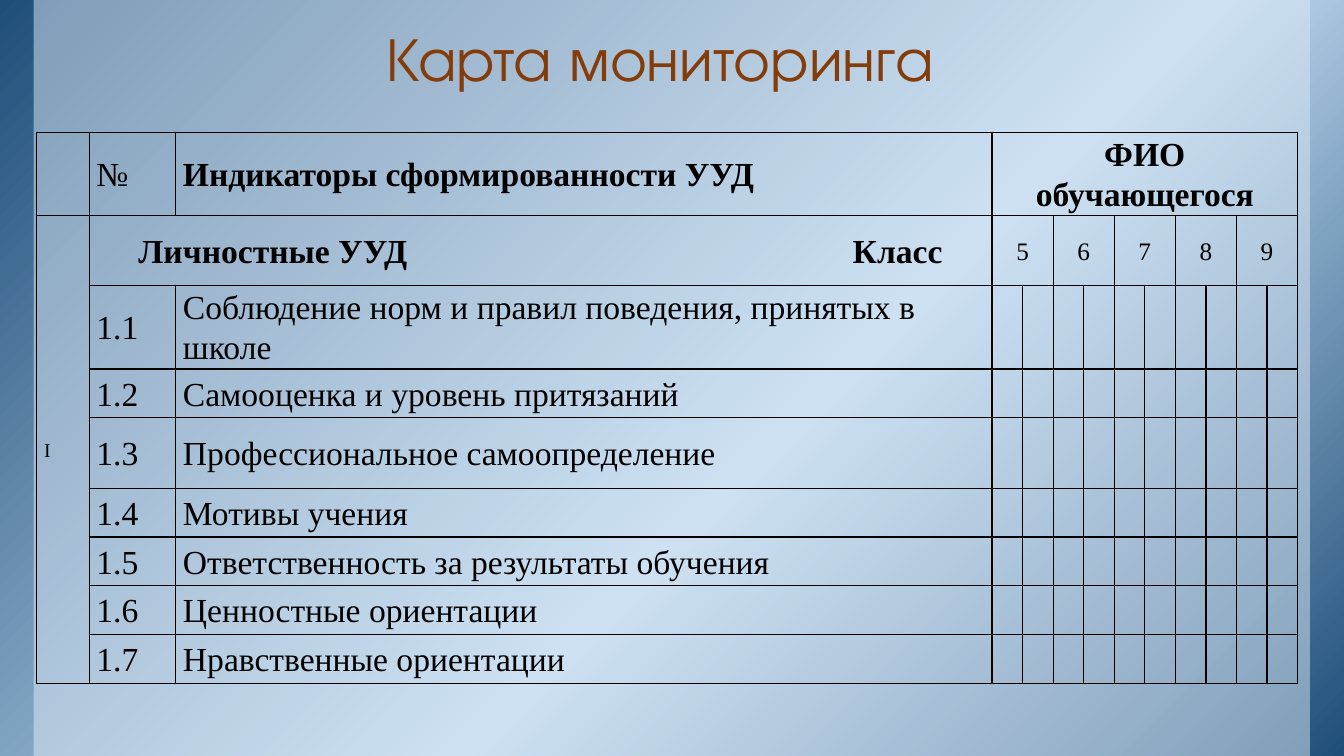
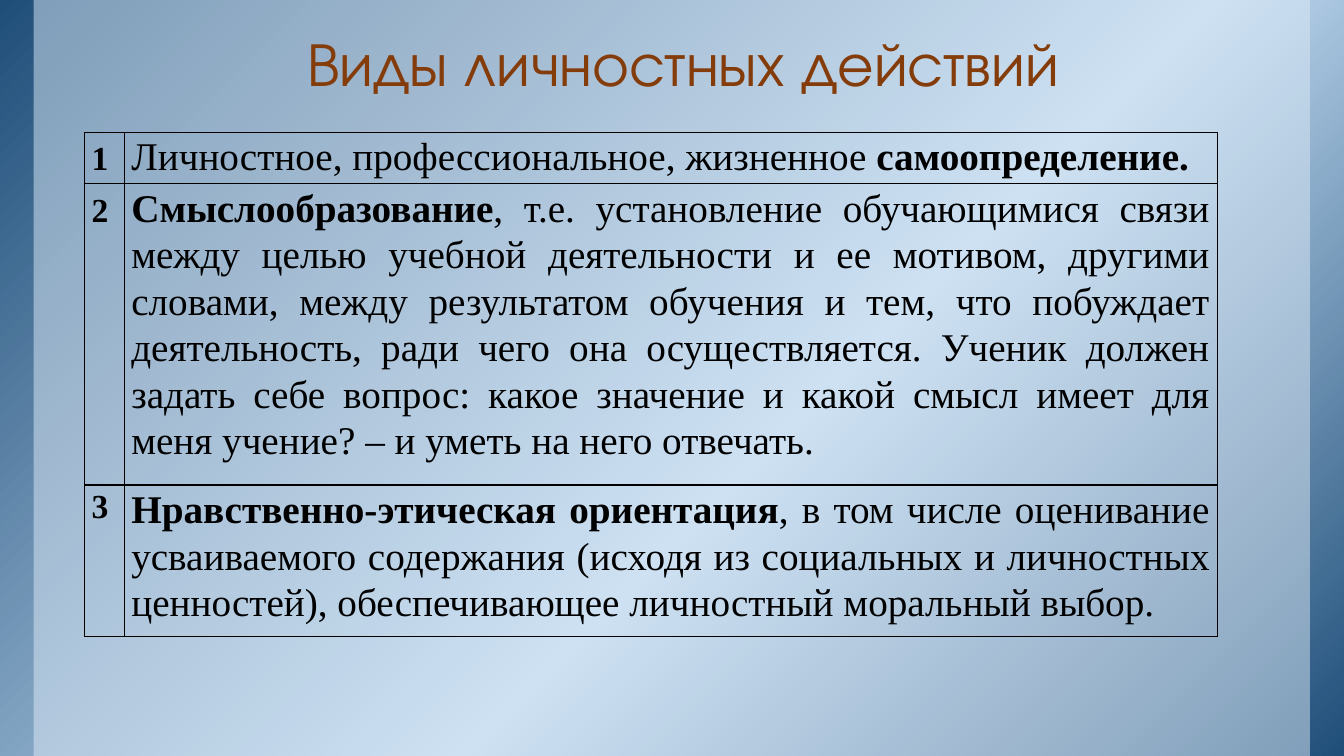
from dataclasses import dataclass

from pptx import Presentation
from pptx.dml.color import RGBColor
from pptx.enum.shapes import MSO_SHAPE
from pptx.enum.text import MSO_ANCHOR, MSO_AUTO_SIZE, PP_ALIGN
from pptx.oxml import parse_xml
from pptx.oxml.ns import nsdecls
from pptx.util import Cm, Pt

RECT = MSO_SHAPE.RECTANGLE
NO_FIT = MSO_AUTO_SIZE.NONE
TOP, MIDDLE, BOTTOM = MSO_ANCHOR.TOP, MSO_ANCHOR.MIDDLE, MSO_ANCHOR.BOTTOM
LEFT, CENTER, JUSTIFY = PP_ALIGN.LEFT, PP_ALIGN.CENTER, PP_ALIGN.JUSTIFY


@dataclass(frozen=True)
class Theme:
    dark: str = "1F4E79"
    light: str = "BDD7EE"
    panel: str = "DEEBF7"
    title: str = "843C0B"
    text: str = "000000"
    title_font: str = "TeX Gyre Adventor"
    body_font: str = "Times New Roman"
    title_size: int = 44
    body_size: int = 28
    table_size: int = 24
    grade_size: int = 18
    section_size: int = 14
    title_spacing: float = 0.85
    body_spacing: float = 1.07
    border: int = 1


THEME = Theme()
SLIDE_W, SLIDE_H = 33.87, 19.05
PANEL_X, PANEL_W = 0.85, 32.16

MAP_COLS = [1.32, 2.18, 20.57] + [0.77] * 10
MAP_ROWS = [2.11, 1.75, 2.11, 1.23, 1.77] + [1.23] * 4
GRADES = range(5, 10)
GRADE_COL = 3
INDICATORS = [
    "Соблюдение норм и правил поведения, принятых в школе",
    "Самооценка и уровень притязаний",
    "Профессиональное самоопределение",
    "Мотивы учения",
    "Ответственность за результаты обучения",
    "Ценностные ориентации",
    "Нравственные ориентации",
]

ACTION_COLS = [1.0, 27.55]
ACTION_ROWS = [1.3, 7.59, 3.81]
# Each action is a list of (text, bold) runs.
ACTIONS = [
    [("Личностное, профессиональное, жизненное ", False), ("самоопределение.", True)],
    [("Смыслообразование", True),
     (", т.е. установление обучающимися связи между целью учебной деятельности "
      "и ее мотивом, другими словами, между результатом обучения и тем, что "
      "побуждает деятельность, ради чего она осуществляется. Ученик должен "
      "задать себе вопрос: какое значение и какой смысл имеет для меня учение? "
      "– и уметь на него отвечать.", False)],
    [("Нравственно-этическая ориентация", True),
     (", в том числе оценивание усваиваемого содержания (исходя из социальных "
      "и личностных ценностей), обеспечивающее личностный моральный выбор.", False)],
]


def set_attrs(obj, **values):
    for name, value in values.items():
        setattr(obj, name, value)


def add_run(p, text, size, bold=False, font=THEME.body_font, color=THEME.text):
    r = p.add_run()
    r.text = text
    set_attrs(r.font, size=Pt(size), bold=bold, name=font)
    r.font.color.rgb = RGBColor.from_string(color)


def add_backdrop(slide):
    """Draw the gradient and the pale panel, then move them to the slide's layout."""
    gradient, panel = (
        slide.shapes.add_shape(RECT, Cm(x), 0, Cm(w), Cm(SLIDE_H))
        for x, w in ((0, SLIDE_W), (PANEL_X, PANEL_W))
    )
    stops = "".join(
        f'<a:gs pos="{pos}000"><a:srgbClr val="{color}"/></a:gs>'
        for pos, color in ((0, THEME.dark), (58, THEME.light), (100, THEME.dark))
    )
    fills = (
        f'<a:gradFill {nsdecls("a")} rotWithShape="1"><a:gsLst>{stops}</a:gsLst>'
        '<a:lin ang="2700000" scaled="0"/></a:gradFill>',
        f'<a:solidFill {nsdecls("a")}><a:srgbClr val="{THEME.panel}">'
        '<a:alpha val="50000"/></a:srgbClr></a:solidFill>',
    )
    tree = slide.slide_layout.shapes.element
    for i, (shape, fill) in enumerate(zip((gradient, panel), fills)):
        shape.shadow.inherit = False
        shape.line.fill.background()
        shape.element.spPr.insert(2, parse_xml(fill))
        tree.insert(2 + i, shape.element)


def add_title(slide, text, x, y, w, h):
    title = slide.shapes.title
    set_attrs(title, left=Cm(x), top=Cm(y), width=Cm(w), height=Cm(h))
    tf = title.text_frame
    set_attrs(tf, auto_size=NO_FIT, word_wrap=True, vertical_anchor=BOTTOM,
              margin_left=Cm(0.33), margin_right=Cm(0.33),
              margin_top=Cm(0.18), margin_bottom=Cm(0.18))
    p = tf.paragraphs[0]
    set_attrs(p, alignment=CENTER, line_spacing=THEME.title_spacing)
    add_run(p, text, THEME.title_size, font=THEME.title_font, color=THEME.title)


def add_grid(slide, x, y, cols, rows, anchor, margins):
    """Add an unfilled table with thin borders; margins go left, right, top, bottom."""
    frame = slide.shapes.add_table(len(rows), len(cols), Cm(x), Cm(y),
                                   Cm(sum(cols)), Cm(sum(rows)))
    table = frame.table
    set_attrs(table, first_row=False, horz_banding=False)
    for col, width in zip(table.columns, cols):
        col.width = Cm(width)
    for row, height in zip(table.rows, rows):
        row.height = Cm(height)
    sides = ("left", "right", "top", "bottom")
    for cell in table.iter_cells():
        cell.fill.background()
        cell.vertical_anchor = anchor
        set_attrs(cell, **{f"margin_{side}": Cm(m) for side, m in zip(sides, margins)})
        tc_pr = cell._tc.get_or_add_tcPr()
        for i, side in enumerate("LRTB"):
            tc_pr.insert(i, parse_xml(
                f'<a:ln{side} {nsdecls("a")} w="{Pt(THEME.border)}"><a:solidFill>'
                f'<a:srgbClr val="{THEME.text}"/></a:solidFill></a:ln{side}>'))
    return table


def write_cell(cell, runs, align=LEFT, **spacing):
    """Fill a cell with runs given as (text, size, bold)."""
    p = cell.text_frame.paragraphs[0]
    set_attrs(p, alignment=align, line_spacing=THEME.body_spacing, **spacing)
    for text, size, bold in runs:
        add_run(p, text, size, bold)
    return p


def add_monitoring_map(slide, x, y):
    table = add_grid(slide, x, y, MAP_COLS, MAP_ROWS, MIDDLE, (0.18, 0.18, 0, 0))
    last_row, last_col = len(MAP_ROWS) - 1, len(MAP_COLS) - 1
    size = THEME.table_size

    write_cell(table.cell(0, 1), [("№", size, False)])
    write_cell(table.cell(0, 2), [("Индикаторы сформированности УУД", size, True)])
    student = table.cell(0, GRADE_COL)
    student.merge(table.cell(0, last_col))
    write_cell(student, [("ФИО обучающегося", size, True)], CENTER)

    section = table.cell(1, 0)
    section.merge(table.cell(last_row, 0))
    write_cell(section, [("I", THEME.section_size, False)])

    heading = table.cell(1, 1)
    heading.merge(table.cell(1, 2))
    heading.margin_left = Cm(1.24)
    p = write_cell(heading, [("Личностные УУД\tКласс", size, True)])
    p._p.get_or_add_pPr().append(parse_xml(
        f'<a:tabLst {nsdecls("a")}><a:tab pos="{Cm(18)}" algn="l"/></a:tabLst>'))

    for i, grade in enumerate(GRADES):
        col = GRADE_COL + 2 * i
        cell = table.cell(1, col)
        cell.merge(table.cell(1, col + 1))
        write_cell(cell, [(str(grade), THEME.grade_size, False)], CENTER)

    for i, indicator in enumerate(INDICATORS, 1):
        write_cell(table.cell(i + 1, 1), [(f"1.{i}", size, False)])
        write_cell(table.cell(i + 1, 2), [(indicator, size, False)])


def add_action_list(slide, x, y):
    table = add_grid(slide, x, y, ACTION_COLS, ACTION_ROWS, TOP, (0.18, 0.2, 0.02, 0))
    after = Pt(8)
    for i, action in enumerate(ACTIONS):
        number = [(str(i + 1), THEME.table_size, True)]
        if i < len(ACTIONS) - 1:
            # A body-size space lowers the number to the baseline of the text.
            number.append((" ", THEME.body_size, False))
        write_cell(table.cell(i, 0), number, JUSTIFY, space_after=after)
        runs = [(text, THEME.body_size, bold) for text, bold in action]
        write_cell(table.cell(i, 1), runs, JUSTIFY, space_after=after)


def main():
    prs = Presentation()
    set_attrs(prs, slide_width=Cm(SLIDE_W), slide_height=Cm(SLIDE_H))
    title_only = prs.slide_layouts[5]

    s = prs.slides.add_slide(title_only)
    add_backdrop(s)
    add_title(s, "Карта мониторинга", 2.54, 0.33, 28.22, 2.21)
    add_monitoring_map(s, 0.93, 3.33)

    s = prs.slides.add_slide(title_only)
    add_title(s, "Виды личностных действий", 3.12, 0.33, 28.22, 2.36)
    add_action_list(s, 2.13, 3.33)

    prs.save("out.pptx")


if __name__ == "__main__":
    main()
